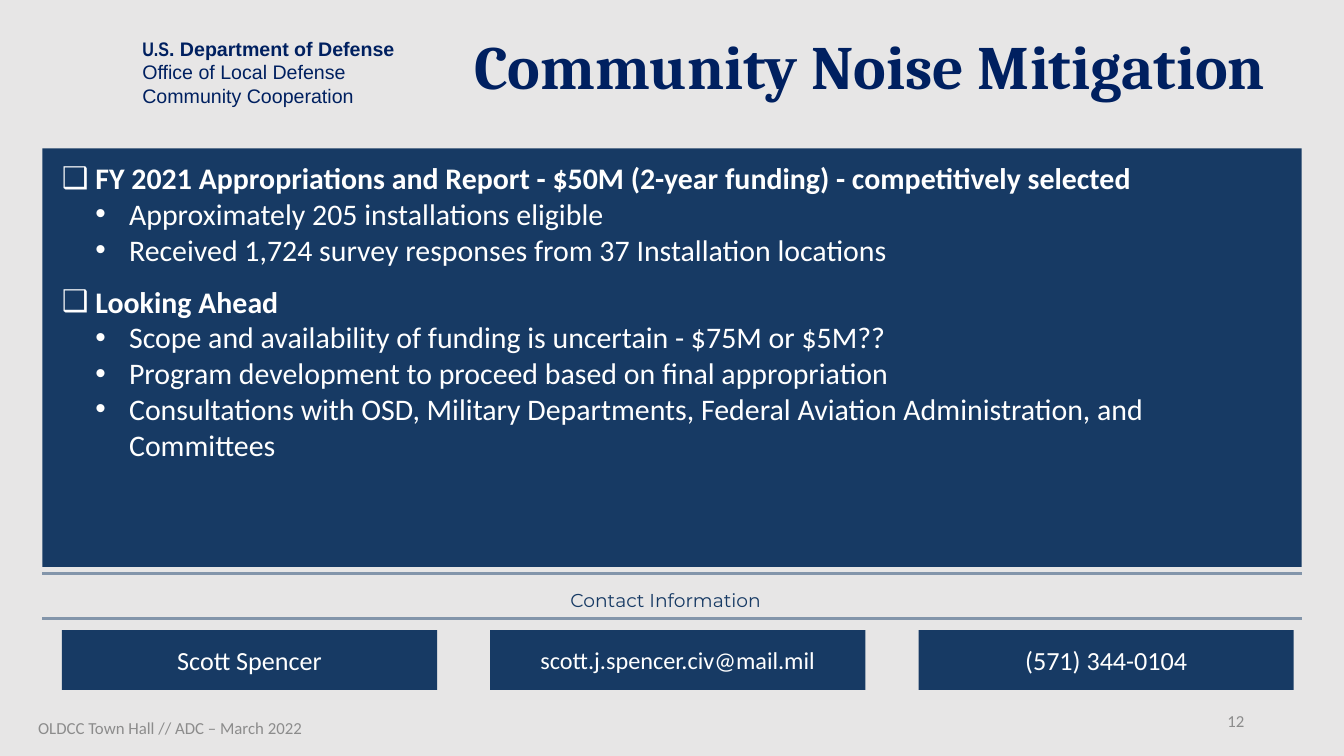
from dataclasses import dataclass

from lxml import etree
from pptx import Presentation
from pptx.dml.color import RGBColor
from pptx.enum.shapes import MSO_CONNECTOR, MSO_SHAPE
from pptx.enum.text import MSO_ANCHOR, MSO_AUTO_SIZE, PP_ALIGN
from pptx.oxml.ns import qn
from pptx.util import Cm, Pt

LEFT, CENTER, RIGHT = PP_ALIGN.LEFT, PP_ALIGN.CENTER, PP_ALIGN.RIGHT
TOP, MIDDLE = MSO_ANCHOR.TOP, MSO_ANCHOR.MIDDLE
RECTANGLE = MSO_SHAPE.RECTANGLE
STRAIGHT = MSO_CONNECTOR.STRAIGHT
NO_AUTOFIT = MSO_AUTO_SIZE.NONE
TITLE_ONLY = 5


@dataclass(frozen=True)
class Theme:
    background: str = "E7E6E6"
    heading: str = "002060"
    panel: str = "173A64"
    rule: str = "8395AA"
    white: str = "FFFFFF"
    muted: str = "8C8C8C"
    title_size: int = 66
    body_size: int = 32
    card_size: int = 28
    email_size: int = 26
    agency_size: int = 21
    contact_size: int = 20
    footer_size: int = 18
    body_font: str = "Calibri"
    title_font: str = "Cambria"
    agency_font: str = "Arial"
    initials_font: str = "Arial Narrow"
    contact_font: str = "Montserrat"


THEME = Theme()
MARGIN = 1.6
RULE_END = 49.2
CARD_LEFT, CARD_STEP = 2.34, 16.19

TOPICS = [
    ("FY 2021 Appropriations and Report - $50M (2-year funding) - competitively selected", [
        "Approximately 205 installations eligible",
        "Received 1,724 survey responses from 37 Installation locations",
    ]),
    ("Looking Ahead", [
        "Scope and availability of funding is uncertain - $75M or $5M??",
        "Program development to proceed based on final appropriation",
        "Consultations with OSD, Military Departments, Federal Aviation Administration, and Committees",
    ]),
]
CONTACTS = [
    ("Scott Spencer", THEME.card_size),
    ("scott.j.spencer.civ@mail.mil", THEME.email_size),
    ("(571) 344-0104", THEME.card_size),
]


def add_span(para, text, size, color, font=THEME.body_font, bold=False):
    span = para.add_run()
    span.text = text
    span.font.size = Pt(size)
    span.font.name = font
    span.font.bold = bold
    span.font.color.rgb = RGBColor.from_string(color)


def next_para(frame, first):
    return frame.paragraphs[0] if first else frame.add_paragraph()


def set_insets(frame, left=0, top=0, right=0, bottom=0):
    frame.margin_left, frame.margin_top = Cm(left), Cm(top)
    frame.margin_right, frame.margin_bottom = Cm(right), Cm(bottom)


def add_box(page, left, top, width, height, align=LEFT, anchor=TOP):
    box = page.shapes.add_textbox(Cm(left), Cm(top), Cm(width), Cm(height))
    frame = box.text_frame
    frame.word_wrap = True
    frame.vertical_anchor = anchor
    frame.paragraphs[0].alignment = align
    return frame


def add_panel(page, left, top, width, height, anchor):
    panel = page.shapes.add_shape(RECTANGLE, Cm(left), Cm(top), Cm(width), Cm(height))
    panel.shadow.inherit = False
    panel.fill.solid()
    panel.fill.fore_color.rgb = RGBColor.from_string(THEME.panel)
    panel.line.fill.background()
    frame = panel.text_frame
    frame.word_wrap = True
    frame.vertical_anchor = anchor
    return frame


def add_rule(page, top):
    rule = page.shapes.add_connector(STRAIGHT, Cm(MARGIN), Cm(top), Cm(RULE_END), Cm(top))
    rule.line.color.rgb = RGBColor.from_string(THEME.rule)
    rule.line.width = Pt(3.75)
    etree.SubElement(rule._element.spPr, qn("a:effectLst"))


def set_bullet(para, symbol, level):
    para.level = level
    para.alignment = LEFT
    props = para._p.get_or_add_pPr()
    props.set("marL", str(Cm(1.27 * (level + 1))))
    props.set("indent", str(Cm(-1.27)))
    etree.SubElement(props, qn("a:buFont")).set("typeface", "Arial")
    etree.SubElement(props, qn("a:buChar")).set("char", symbol)


def add_title(page):
    title = page.shapes.title
    title.left, title.top, title.width, title.height = Cm(15.21), Cm(1.24), Cm(35.31), Cm(3.71)
    frame = title.text_frame
    frame.auto_size = NO_AUTOFIT
    frame.vertical_anchor = TOP
    para = frame.paragraphs[0]
    para.alignment = CENTER
    para.line_spacing = 0.9
    add_span(para, "Community Noise Mitigation", THEME.title_size, THEME.heading,
             THEME.title_font, True)


def add_agency(page):
    frame = add_box(page, 5.13, 1.27, 10.13, 2.95)
    frame.word_wrap = False
    lines = [
        [("U.S", THEME.initials_font, True), (". Department of Defense", THEME.agency_font, True)],
        [("Office of Local Defense", THEME.agency_font, False)],
        [("Community Cooperation", THEME.agency_font, False)],
    ]
    for index, spans in enumerate(lines):
        para = next_para(frame, index == 0)
        for text, font, bold in spans:
            add_span(para, text, THEME.agency_size, THEME.heading, font, bold)


def add_topics(page):
    frame = add_panel(page, MARGIN, 5.61, RULE_END - MARGIN, 15.82, TOP)
    set_insets(frame, left=0.74, top=0.43, right=1.14)
    for index, (heading, points) in enumerate(TOPICS):
        para = next_para(frame, index == 0)
        set_bullet(para, "❑", 0)
        if index:
            para.space_before = Pt(17)
        add_span(para, heading, THEME.body_size, THEME.white, bold=True)
        for point in points:
            para = frame.add_paragraph()
            set_bullet(para, "•", 1)
            add_span(para, point, THEME.body_size, THEME.white)


def add_contacts(page):
    for top in (21.69, 23.39):
        add_rule(page, top)
    frame = add_box(page, 17.5, 22.12, 15.32, 0.94, CENTER)
    set_insets(frame)
    para = frame.paragraphs[0]
    para.line_spacing = Pt(28)
    add_span(para, "Contact Information", THEME.contact_size, THEME.panel, THEME.contact_font)
    for index, (text, size) in enumerate(CONTACTS):
        card = add_panel(page, CARD_LEFT + index * CARD_STEP, 23.82, 14.18, 2.26, MIDDLE)
        card.paragraphs[0].alignment = CENTER
        add_span(card.paragraphs[0], text, size, THEME.white)


def add_footer(page):
    notes = [
        ("OLDCC Town Hall // ADC – March 2022", 0.64, 26.77, 11.58, CENTER),
        ("12", 35.86, 26.49, 11.43, RIGHT),
    ]
    for text, left, top, width, align in notes:
        frame = add_box(page, left, top, width, 1.52, align, MIDDLE)
        add_span(frame.paragraphs[0], text, THEME.footer_size, THEME.muted)


def main():
    deck = Presentation()
    deck.slide_width, deck.slide_height = Cm(50.8), Cm(28.58)
    page = deck.slides.add_slide(deck.slide_layouts[TITLE_ONLY])
    page.background.fill.solid()
    page.background.fill.fore_color.rgb = RGBColor.from_string(THEME.background)
    add_agency(page)
    add_title(page)
    add_topics(page)
    add_contacts(page)
    add_footer(page)
    deck.save("out.pptx")


if __name__ == "__main__":
    main()
